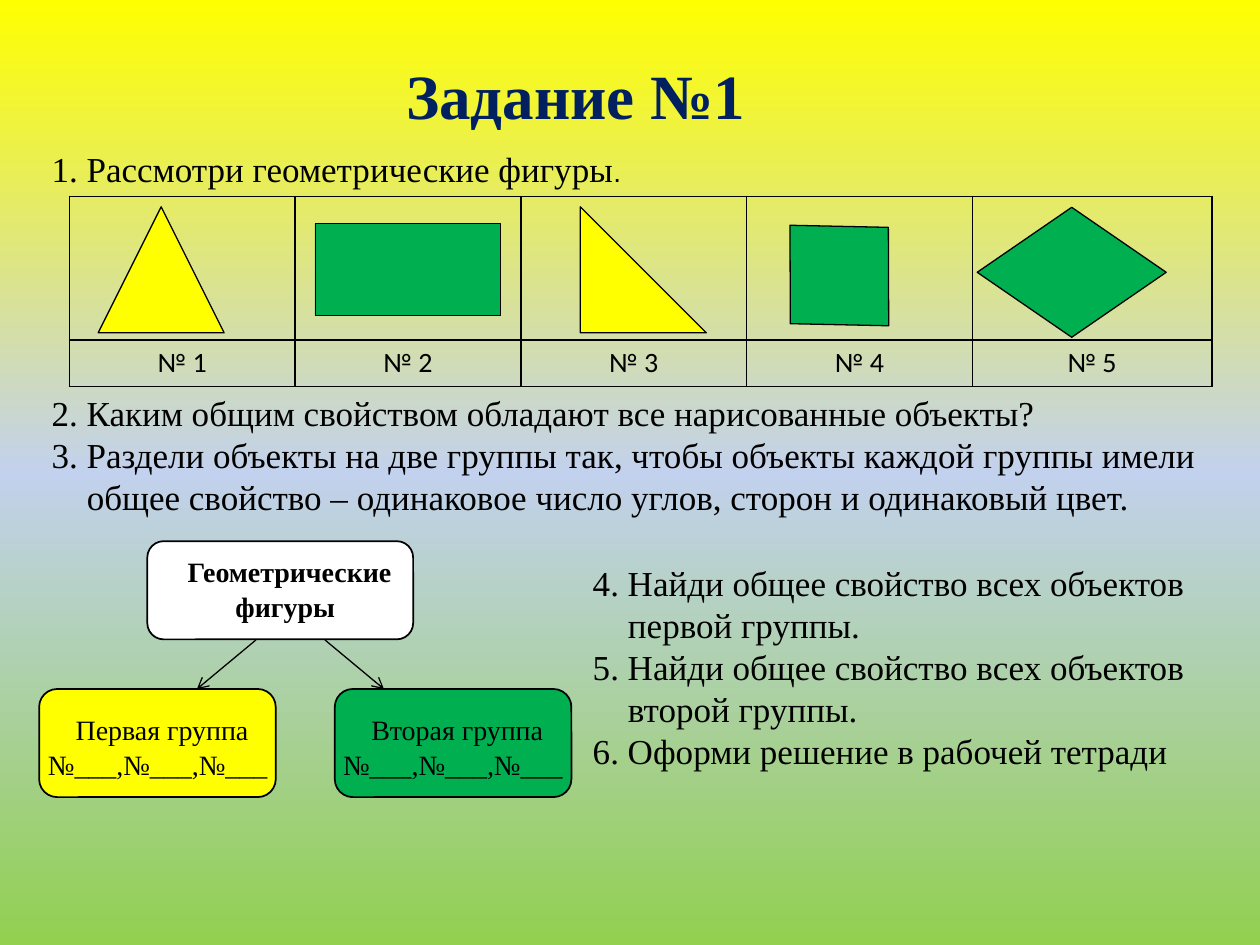
from copy import deepcopy
from dataclasses import dataclass

from lxml import etree
from pptx import Presentation
from pptx.dml.color import RGBColor
from pptx.enum.shapes import MSO_CONNECTOR, MSO_SHAPE
from pptx.enum.text import MSO_ANCHOR, PP_ALIGN
from pptx.oxml.ns import qn
from pptx.util import Cm, Pt

CENTER, LEFT = PP_ALIGN.CENTER, PP_ALIGN.LEFT
TOP, MIDDLE = MSO_ANCHOR.TOP, MSO_ANCHOR.MIDDLE
STRAIGHT = MSO_CONNECTOR.STRAIGHT
TRIANGLE, RIGHT_TRIANGLE = MSO_SHAPE.ISOSCELES_TRIANGLE, MSO_SHAPE.RIGHT_TRIANGLE
DIAMOND, RECTANGLE = MSO_SHAPE.DIAMOND, MSO_SHAPE.RECTANGLE
ROUNDED = MSO_SHAPE.ROUNDED_RECTANGLE
SERIF = "Times New Roman"
BLACK, WHITE, YELLOW, GREEN, NAVY = "000000", "FFFFFF", "FFFF00", "00B050", "002060"
HANG = Cm(0.71)


@dataclass(frozen=True)
class Box:
    left: float
    top: float
    width: float
    height: float

    def lengths(self) -> tuple:
        """Return the box as Cm lengths."""
        return Cm(self.left), Cm(self.top), Cm(self.width), Cm(self.height)


@dataclass(frozen=True)
class Figure:
    kind: int
    box: Box
    fill: str
    line: float = 0.75
    rotation: float = 0


@dataclass(frozen=True)
class Run:
    text: str
    size: float = 20
    bold: bool = False
    font: str = SERIF
    color: str = BLACK


@dataclass(frozen=True)
class TextBlock:
    box: Box
    paragraphs: tuple
    align: int = LEFT
    anchor: int = TOP
    spacing: float = 1.0


@dataclass(frozen=True)
class Arrow:
    start: tuple
    end: tuple


def rgb(color: str) -> RGBColor:
    """Turn a hex string into a colour."""
    return RGBColor.from_string(color)


def paint_background(slide, colors: tuple) -> None:
    """Fill the slide with an evenly spaced vertical gradient."""
    fill = slide.background.fill
    fill.gradient()
    fill.gradient_angle = 270
    stop_list = slide.element.find(".//" + qn("a:gsLst"))
    stop_list.insert(1, deepcopy(stop_list[0]))
    for i, (stop, color) in enumerate(zip(fill.gradient_stops, colors)):
        stop.position = i / (len(colors) - 1)
        stop.color.rgb = rgb(color)


def add_runs(paragraph, runs: tuple) -> None:
    """Write the runs into a paragraph."""
    for item in runs:
        run = paragraph.add_run()
        run.text = item.text
        run.font.size = Pt(item.size)
        run.font.bold = item.bold
        run.font.name = item.font
        run.font.color.rgb = rgb(item.color)


def add_text(slide, block: TextBlock) -> None:
    """Draw a text block, hanging its numbered items when left aligned."""
    frame = slide.shapes.add_textbox(*block.box.lengths()).text_frame
    frame.word_wrap = True
    frame.vertical_anchor = block.anchor
    for i, runs in enumerate(block.paragraphs):
        paragraph = frame.add_paragraph() if i else frame.paragraphs[0]
        paragraph.alignment = block.align
        paragraph.line_spacing = block.spacing
        if block.align == LEFT:
            properties = paragraph._p.get_or_add_pPr()
            properties.set("marL", str(HANG))
            properties.set("indent", str(-HANG))
        add_runs(paragraph, runs)


def add_figure(slide, figure: Figure) -> None:
    """Draw a filled and outlined shape."""
    shape = slide.shapes.add_shape(figure.kind, *figure.box.lengths())
    shape.shadow.inherit = False
    shape.rotation = figure.rotation
    shape.fill.solid()
    shape.fill.fore_color.rgb = rgb(figure.fill)
    shape.line.color.rgb = rgb(BLACK)
    shape.line.width = Pt(figure.line)


def add_arrow(slide, arrow: Arrow) -> None:
    """Draw a straight line with an open arrowhead at its end."""
    points = [Cm(value) for value in arrow.start + arrow.end]
    connector = slide.shapes.add_connector(STRAIGHT, *points)
    connector.line.color.rgb = rgb(BLACK)
    connector.line.width = Pt(0.75)
    etree.SubElement(connector.line._get_or_add_ln(), qn("a:tailEnd"), type="arrow")
    etree.SubElement(connector._element.spPr, qn("a:effectLst"))


def border_cell(cell) -> None:
    """Give a cell no fill and a thin black border on each side."""
    properties = cell._tc.get_or_add_tcPr()
    for side in ("lnL", "lnR", "lnT", "lnB"):
        line = etree.SubElement(properties, qn(f"a:{side}"), w=str(Pt(1)))
        fill = etree.SubElement(line, qn("a:solidFill"))
        etree.SubElement(fill, qn("a:srgbClr"), val=BLACK)
    cell.fill.background()


def add_figure_table(slide, box: Box, widths: tuple, heights: tuple) -> None:
    """Draw the grid with a row for figures and a row for their numbers."""
    table = slide.shapes.add_table(len(heights), len(widths), *box.lengths()).table
    table.first_row = table.horz_banding = False
    for row, height in zip(table.rows, heights):
        row.height = Cm(height)
    for column, width in zip(table.columns, widths):
        column.width = Cm(width)
    for cell in table.iter_cells():
        border_cell(cell)
    for i in range(len(widths)):
        paragraph = table.cell(1, i).text_frame.paragraphs[0]
        paragraph.alignment = CENTER
        add_runs(paragraph, (Run(f"№ {i + 1}", 16, font="Calibri"),))


def group_caption(left: float, name: str) -> TextBlock:
    """Describe a group's name above its blanks."""
    blanks = ",".join(["№___"] * 3)
    lines = ((Run(" "), Run(name, 16)), (Run(blanks, 16),))
    return TextBlock(Box(left, 14.1, 5.56, 1.8), lines, CENTER)


FIGURES = (
    Figure(TRIANGLE, Box(1.98, 4.17, 2.54, 2.54), YELLOW),
    Figure(RECTANGLE, Box(6.35, 4.51, 3.75, 1.85), GREEN, 0.5),
    Figure(RIGHT_TRIANGLE, Box(11.7, 4.17, 2.54, 2.54), YELLOW),
    Figure(DIAMOND, Box(15.5, 4.17, 2.84, 2.77), GREEN, rotation=45.5),
    Figure(DIAMOND, Box(19.7, 4.18, 3.81, 2.62), GREEN),
    Figure(ROUNDED, Box(2.97, 10.91, 5.36, 1.98), WHITE, 1),
    Figure(ROUNDED, Box(0.79, 13.89, 4.77, 2.18), YELLOW, 1),
    Figure(ROUNDED, Box(6.75, 13.89, 4.77, 2.18), GREEN, 1),
)
TEXTS = (
    TextBlock(Box(7.9, 0.79, 7.42, 1.9),
              ((Run("Задание №1", 36, True, color=NAVY),),), CENTER, spacing=1.15),
    TextBlock(Box(0.79, 2.85, 12.2, 1.11),
              ((Run("1. Рассмотри геометрические фигуры"),
                Run(".", 16, font="Arial")),), anchor=MIDDLE),
    TextBlock(Box(0.79, 7.75, 24.03, 2.82), (
        (Run("2. Каким общим свойством обладают все нарисованные объекты?"),),
        (Run("3. Раздели объекты на две группы так, чтобы объекты каждой группы имели "
             "общее свойство – одинаковое число углов, сторон и одинаковый цвет."),),
    ), anchor=MIDDLE),
    TextBlock(Box(2.97, 10.91, 5.56, 1.8),
              ((Run(" "), Run("Геометрические фигуры", 16, True)),), CENTER),
    group_caption(0.4, "Первая группа"),
    group_caption(6.35, "Вторая группа"),
    TextBlock(Box(11.7, 11.15, 13.28, 4.57), (
        (Run("4. Найди общее свойство всех объектов первой группы."),),
        (Run("5. Найди общее свойство всех объектов второй группы."),),
        (Run("6. Оформи решение в рабочей тетради"),),
    ), anchor=MIDDLE),
)
ARROWS = (Arrow((6.55, 12.9), (7.74, 13.89)), Arrow((5.16, 12.9), (3.97, 13.89)))


def main() -> None:
    """Build the task slide and save it."""
    deck = Presentation()
    deck.slide_width, deck.slide_height = Cm(25.4), Cm(19.05)
    slide = deck.slides.add_slide(deck.slide_layouts[6])
    paint_background(slide, (YELLOW, "C2D1ED", "92D050"))
    add_figure_table(slide, Box(1.4, 3.96, 23.03, 3.83), (4.55,) * 4 + (4.83,), (2.89, 0.94))
    for figure in FIGURES:
        add_figure(slide, figure)
    for block in TEXTS:
        add_text(slide, block)
    for arrow in ARROWS:
        add_arrow(slide, arrow)
    deck.save("out.pptx")


if __name__ == "__main__":
    main()
